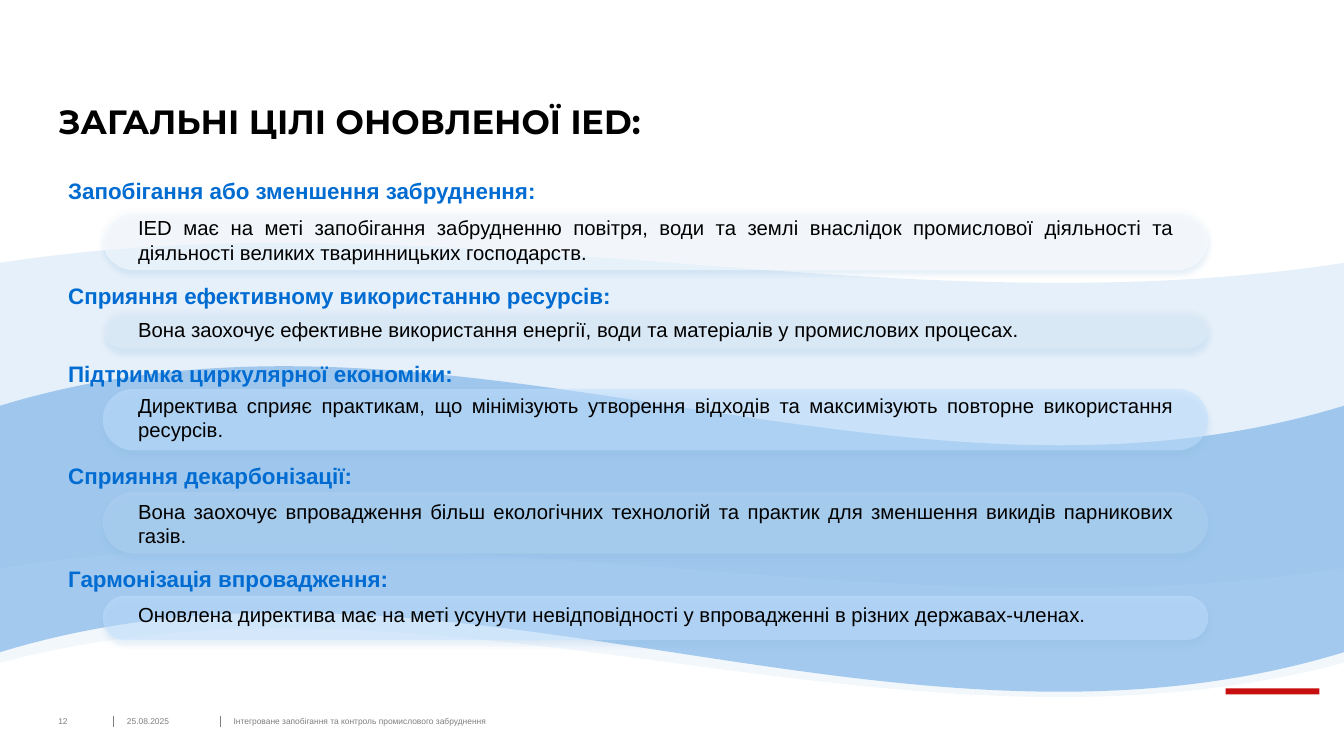
from lxml import etree
from pptx import Presentation
from pptx.dml.color import RGBColor
from pptx.enum.shapes import MSO_CONNECTOR, MSO_SHAPE
from pptx.enum.text import MSO_ANCHOR, PP_ALIGN
from pptx.oxml.ns import qn
from pptx.util import Cm, Pt

RECTANGLE, PILL, WAVE = MSO_SHAPE.RECTANGLE, MSO_SHAPE.ROUNDED_RECTANGLE, MSO_SHAPE.WAVE
STRAIGHT = MSO_CONNECTOR.STRAIGHT
TOP, MIDDLE, BOTTOM = MSO_ANCHOR.TOP, MSO_ANCHOR.MIDDLE, MSO_ANCHOR.BOTTOM
LEFT, JUSTIFY = PP_ALIGN.LEFT, PP_ALIGN.JUSTIFY

BLACK = RGBColor(0x00, 0x00, 0x00)
WHITE = RGBColor(0xFF, 0xFF, 0xFF)
GREY = RGBColor(0x7F, 0x7F, 0x7F)
RED = RGBColor(0xC8, 0x0F, 0x0F)
BLUE = RGBColor(0x00, 0x6C, 0xD2)
PALE_WAVE = RGBColor(0xE5, 0xF0, 0xFA)
DEEP_WAVE = RGBColor(0x80, 0xB5, 0xE8)
SKY = RGBColor(0xC3, 0xE1, 0xFF)
STEEL = RGBColor(0xB1, 0xD2, 0xF1)
MIST = RGBColor(0xE2, 0xED, 0xF7)
SHADOW = RGBColor(0x85, 0xB3, 0xDD)

TITLE_FONT = {"name": "Montserrat", "size": Pt(24), "bold": True}
HEADING_FONT = {"name": "Arial", "size": Pt(16), "bold": True}
BODY_FONT = {"name": "Arial", "size": Pt(14.5), "bold": False}
FOOTER_FONT = {"name": "Arial", "size": Pt(6), "bold": False}

SLIDE_WIDTH, SLIDE_HEIGHT = 33.87, 19.05
TITLE = "ЗАГАЛЬНІ ЦІЛІ ОНОВЛЕНОЇ IED:"

WAVES = [
    (6.1, 8.74, 0.06, PALE_WAVE, 100),
    (9.04, 8.56, 0.105, PALE_WAVE, 49),
    (9.19, 8.28, 0.125, DEEP_WAVE, 69),
]

# Heading top, pill top, text top, pill height, pill colour, heading, text
GOALS = [
    (4.34, 5.26, 5.31, 1.55, WHITE, "Запобігання або зменшення забруднення:",
     "IED має на меті запобігання забрудненню повітря, води та землі внаслідок "
     "промислової діяльності та діяльності великих тваринницьких господарств."),
    (6.98, 7.8, 7.87, 0.97, MIST, "Сприяння ефективному використанню ресурсів:",
     "Вона заохочує ефективне використання енергії, води та матеріалів "
     "у промислових процесах."),
    (8.94, 9.8, 9.78, 1.55, SKY, "Підтримка циркулярної економіки:",
     "Директива сприяє практикам, що мінімізують утворення відходів "
     "та максимізують повторне використання ресурсів."),
    (11.51, 12.4, 12.45, 1.55, STEEL, "Сприяння декарбонізації:",
     "Вона заохочує впровадження більш екологічних технологій та практик "
     "для зменшення викидів парникових газів."),
    (14.12, 15.01, 15.06, 1.12, SKY, "Гармонізація впровадження:",
     "Оновлена директива має на меті усунути невідповідності у впровадженні "
     "в різних державах-членах."),
]

FOOTER = [
    (0, 1.3, "12"),
    (1.73, 2, "25.08.2025"),
    (4.42, 19, "Інтегроване запобігання та контроль промислового забруднення"),
]


def lengths(box):
    """Turn a box in centimetres into lengths."""
    return [Cm(value) for value in box]


def write(holder, text, font, color, align=LEFT, anchor=TOP, inset=None):
    """Write one formatted paragraph into a shape."""
    frame = holder.text_frame
    frame.word_wrap = True
    frame.vertical_anchor = anchor
    if inset is not None:
        for side in ("left", "top", "right", "bottom"):
            setattr(frame, f"margin_{side}", Cm(inset))
    paragraph = frame.paragraphs[0]
    paragraph.alignment = align
    run = paragraph.add_run()
    run.text = text
    for name, value in font.items():
        setattr(run.font, name, value)
    run.font.color.rgb = color
    return paragraph


def add_filled(slide, kind, box, color, opacity=100):
    """Add an outline-free shape with a partly transparent fill."""
    shape = slide.shapes.add_shape(kind, *lengths(box))
    shape.shadow.inherit = False
    shape.line.fill.background()
    shape.fill.solid()
    shape.fill.fore_color.rgb = color
    if opacity < 100:
        tint = shape.fill._xPr.find(".//" + qn("a:srgbClr"))
        etree.SubElement(tint, qn("a:alpha"), val=str(opacity * 1000))
    return shape


def add_pill(slide, box, color):
    """Add a rounded bar with a soft shadow below it."""
    pill = add_filled(slide, PILL, box, color, 49)
    pill.adjustments[0] = 0.5
    effects = pill._element.spPr.find(qn("a:effectLst"))
    shadow = etree.SubElement(effects, qn("a:outerShdw"), blurRad=str(Pt(4)),
                              dist=str(Pt(3)), dir="5400000", algn="t", rotWithShape="0")
    tint = etree.SubElement(shadow, qn("a:srgbClr"), val=str(SHADOW))
    etree.SubElement(tint, qn("a:alpha"), val="40000")


def add_background(slide, box):
    """Draw the waves and the red accent."""
    left, top, width, height = box
    for wave_top, wave_height, swing, color, opacity in WAVES:
        wave = add_filled(slide, WAVE, (left, top + wave_top, width, wave_height), color, opacity)
        wave.adjustments[0] = swing
        wave.adjustments[1] = 0
    add_filled(slide, RECTANGLE, (left + width - 2.98, top + height - 1.7, 2.36, 0.15), RED)


def add_title(slide, box):
    """Fill and place the title placeholder."""
    title = slide.shapes.title
    title.left, title.top, title.width, title.height = lengths(box)
    write(title, TITLE, TITLE_FONT, BLACK, anchor=BOTTOM, inset=0).line_spacing = 0.9


def add_goal(slide, box, goal):
    """Add one goal: a heading above a pill with its explanation."""
    left, top, width = box
    heading_top, pill_top, text_top, height, color, heading, text = goal
    add_pill(slide, (left + 1.12, top + pill_top, width - 1.12, height), color)
    heading_box = slide.shapes.add_textbox(*lengths((left, top + heading_top, 15, 0.94)))
    write(heading_box, heading, HEADING_FONT, BLUE)
    text_box = slide.shapes.add_textbox(
        *lengths((left + 1.76, top + text_top, width - 2.39, height)))
    write(text_box, text, BODY_FONT, BLACK, JUSTIFY)


def add_footer(slide, box):
    """Add the page number, date and subject with dividers between them."""
    left, top, height = box
    for offset, width, text in FOOTER:
        part = slide.shapes.add_textbox(*lengths((left + offset, top, width, height)))
        write(part, text, FOOTER_FONT, GREY, anchor=MIDDLE, inset=0)
        if offset:
            x = left + offset - 0.34
            divider = slide.shapes.add_connector(STRAIGHT, *lengths((x, top, x, top + 0.28)))
            divider.line.color.rgb = GREY
            divider.line.width = Pt(0.75)
            etree.SubElement(divider._element.spPr, qn("a:effectLst"))


def main():
    """Build and save the slide."""
    deck = Presentation()
    deck.slide_width, deck.slide_height = Cm(SLIDE_WIDTH), Cm(SLIDE_HEIGHT)
    slide = deck.slides.add_slide(deck.slide_layouts.get_by_name("Title Only"))
    add_background(slide, (0, 0, SLIDE_WIDTH, SLIDE_HEIGHT))
    add_title(slide, (1.47, 1.02, 20.4, 2.54))
    for goal in GOALS:
        add_goal(slide, (1.47, 0, 28.98), goal)
    add_footer(slide, (1.47, 18.03, 0.26))
    deck.save("out.pptx")


if __name__ == "__main__":
    main()
